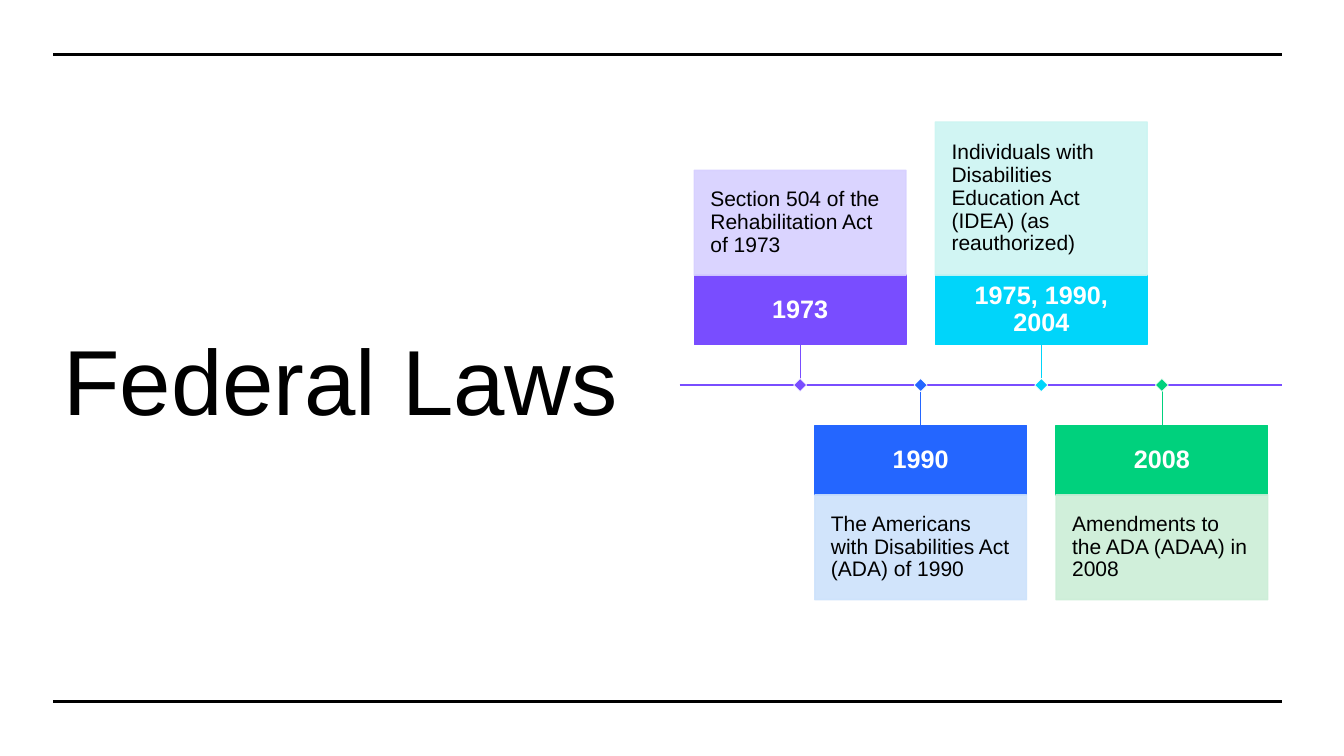
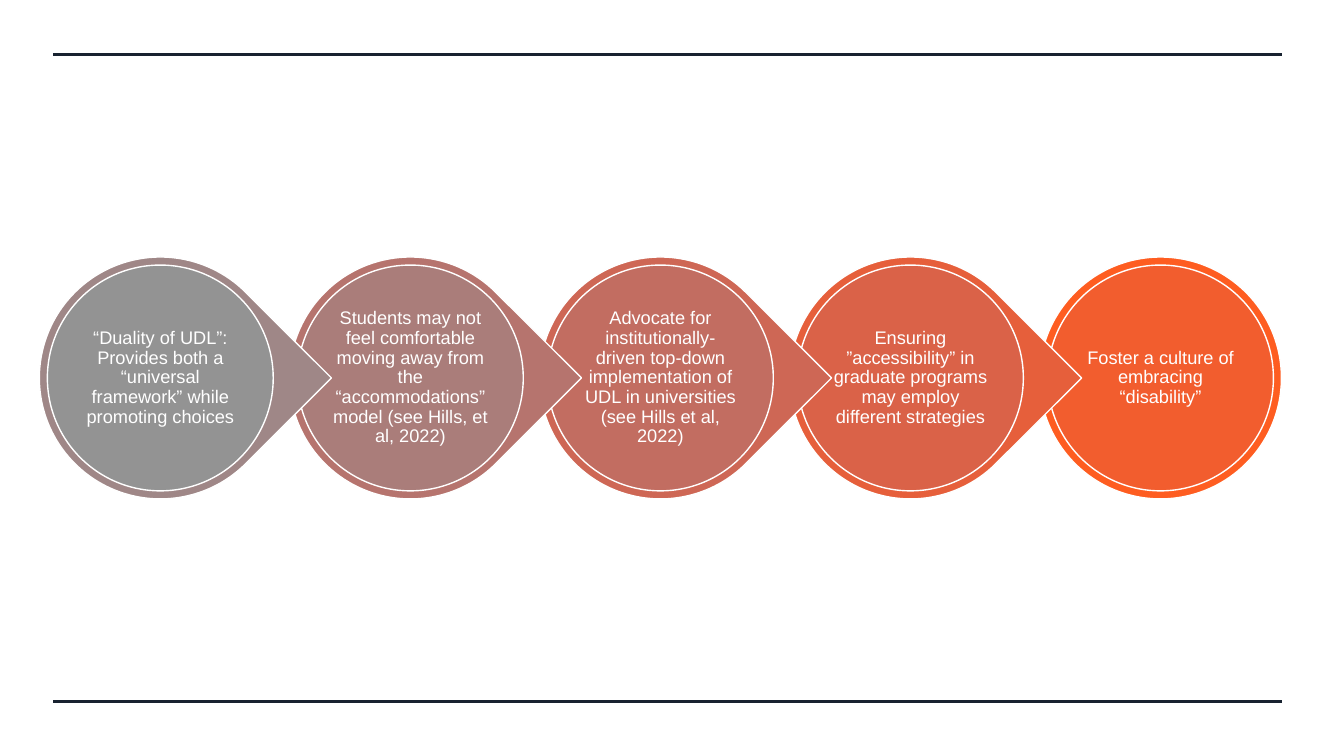
from lxml import etree
from pptx import Presentation
from pptx import util as u
from pptx.dml import color
from pptx.enum import shapes, text
from pptx.oxml import ns

FONT = "Arial"
BLACK, WHITE, NAVY = "000000", "FFFFFF", "182230"
FRAME_LEFT, FRAME_RIGHT = 0.53, 12.72
FRAME_YS = (0.54, 6.96)

AXIS_LEFT, AXIS_Y, AXIS_COLOR = 6.74, 3.82, "794DFF"
CARD_WIDTH, YEAR_HEIGHT, STEM_LENGTH, MARKER_SIZE = 2.1, 0.69, 0.4, 0.13
# year, law, height of the law box, strong colour, pale colour
LAWS = [
    ("1973", "Section 504 of the Rehabilitation Act of 1973", 1.04, "794DFF", "D7D0FF"),
    ("1990", "The Americans with Disabilities Act (ADA) of 1990", 1.04, "2466FF", "CDE2FB"),
    ("1975, 1990, 2004",
     "Individuals with Disabilities Education Act (IDEA) (as reauthorized)",
     1.52, "00D5FA", "CCF5F2"),
    ("2008", "Amendments to the ADA (ADAA) in 2008", 1.04, "00D17D", "CBEED7"),
]

CHAIN_LEFT, CHAIN_STEP, CHAIN_TOP = 0.39, 2.48, 2.55
RING_SIZE, RING_WIDTH = 2.4, 0.08
# statement, ring colour, disc colour
STATEMENTS = [
    ("“Duality of UDL”: Provides both a “universal framework” while promoting choices",
     "9F8787", "939393"),
    ("Students may not feel comfortable moving away from the “accommodations” "
     "model (see Hills, et al, 2022)", "B6746E", "AA7D7A"),
    ("Advocate for institutionally-driven top-down implementation of UDL in "
     "universities (see Hills et al, 2022)", "CE6755", "C26D61"),
    ("Ensuring ”accessibility” in graduate programs may employ different strategies",
     "E65F3B", "DA6248"),
    ("Foster a culture of embracing “disability”", "FE5D21", "F25D2E"),
]


def rgb(value):
    return color.RGBColor.from_string(value)


def add_line(slide, start, end, line_color, width):
    line = slide.shapes.add_connector(
        shapes.MSO_CONNECTOR.STRAIGHT, *(u.Inches(value) for value in (*start, *end)))
    line.line.color.rgb = rgb(line_color)
    line.line.width = u.Pt(width)
    etree.SubElement(line._element.spPr, ns.qn("a:effectLst"))
    return line


def add_shape(slide, kind, box, fill, line_color, line_width=1):
    shape = slide.shapes.add_shape(kind, *(u.Inches(value) for value in box))
    shape.shadow.inherit = False
    shape.fill.solid()
    shape.fill.fore_color.rgb = rgb(fill)
    shape.line.color.rgb = rgb(line_color)
    shape.line.width = u.Pt(line_width)
    return shape


def set_opacity(shape, percent):
    """Apply one opacity to the fill and the outline."""
    for solid in shape._element.spPr.iter(ns.qn("a:srgbClr")):
        etree.SubElement(solid, ns.qn("a:alpha"), val=str(percent * 1000))


def set_text(shape, words, size, font_color, inset, bold=False,
             align=text.PP_ALIGN.CENTER):
    frame = shape.text_frame
    frame.word_wrap = True
    frame.vertical_anchor = text.MSO_ANCHOR.MIDDLE
    frame.margin_left = frame.margin_right = u.Inches(inset)
    frame.margin_top = frame.margin_bottom = u.Inches(inset)
    frame.text = words
    paragraph = frame.paragraphs[0]
    paragraph.alignment = align
    paragraph.line_spacing = 0.9
    font = paragraph.runs[0].font
    font.name, font.size, font.bold = FONT, u.Pt(size), bold
    font.color.rgb = rgb(font_color)


def add_framed_slide(presentation, frame_color):
    """Add a blank slide with the rules along its top and bottom."""
    slide = presentation.slides.add_slide(presentation.slide_layouts[6])
    for y in FRAME_YS:
        add_line(slide, (FRAME_LEFT, y), (FRAME_RIGHT, y), frame_color, 2.25)
    return slide


def add_title(slide, words):
    title = slide.shapes.add_textbox(
        u.Inches(FRAME_LEFT), u.Inches(0.95), u.Inches(6.14), u.Inches(5.75))
    set_text(title, words, 66, BLACK, 0.1, align=text.PP_ALIGN.LEFT)


def add_law(slide, center, above, law):
    """Add a year box, its law box, and the stem and marker on the axis."""
    year, words, height, strong, pale = law
    left = center - CARD_WIDTH / 2
    if above:
        year_top = AXIS_Y - STEM_LENGTH - YEAR_HEIGHT
        law_top, stem_site = year_top - height, 2
    else:
        year_top = AXIS_Y + STEM_LENGTH
        law_top, stem_site = year_top + YEAR_HEIGHT, 0

    rectangle = shapes.MSO_SHAPE.RECTANGLE
    year_box = add_shape(
        slide, rectangle, (left, year_top, CARD_WIDTH, YEAR_HEIGHT), strong, strong)
    set_text(year_box, year, 18, WHITE, 0.1, bold=True)
    law_box = add_shape(slide, rectangle, (left, law_top, CARD_WIDTH, height), pale, pale)
    set_opacity(law_box, 90)
    set_text(law_box, words, 15, BLACK, 0.16, align=text.PP_ALIGN.LEFT)

    stem = add_line(slide, (center, year_top), (center, AXIS_Y), strong, 0.5)
    stem.begin_connect(year_box, stem_site)
    add_shape(slide, shapes.MSO_SHAPE.DIAMOND,
              (center - MARKER_SIZE / 2, AXIS_Y - MARKER_SIZE / 2, MARKER_SIZE, MARKER_SIZE),
              strong, WHITE, 0.5)


def add_statement(slide, left, statement, is_last):
    """Add a ring, pointed unless it is the last, around a disc with text."""
    words, ring_color, disc_color = statement
    kind = shapes.MSO_SHAPE.OVAL if is_last else shapes.MSO_SHAPE.TEAR
    ring = add_shape(slide, kind, (left, CHAIN_TOP, RING_SIZE, RING_SIZE), ring_color, WHITE)
    if not is_last:
        ring.rotation = 45
    disc_size = RING_SIZE - 2 * RING_WIDTH
    disc = add_shape(slide, shapes.MSO_SHAPE.OVAL,
                     (left + RING_WIDTH, CHAIN_TOP + RING_WIDTH, disc_size, disc_size),
                     disc_color, WHITE)
    set_text(disc, words, 13, WHITE, 0.01)


def build_laws_slide(presentation):
    slide = add_framed_slide(presentation, BLACK)
    add_title(slide, "Federal Laws")
    add_line(slide, (AXIS_LEFT, AXIS_Y), (FRAME_RIGHT, AXIS_Y), AXIS_COLOR, 1)
    step = (FRAME_RIGHT - AXIS_LEFT) / (len(LAWS) + 1)
    for index, law in enumerate(LAWS):
        add_law(slide, AXIS_LEFT + step * (index + 1), index % 2 == 0, law)


def build_statements_slide(presentation):
    slide = add_framed_slide(presentation, NAVY)
    last = len(STATEMENTS) - 1
    # Right to left, so that each point lies over the next ring
    for index in range(last, -1, -1):
        add_statement(slide, CHAIN_LEFT + CHAIN_STEP * index, STATEMENTS[index], index == last)


def main():
    presentation = Presentation()
    presentation.slide_width = u.Inches(13.33)
    presentation.slide_height = u.Inches(7.5)
    build_laws_slide(presentation)
    build_statements_slide(presentation)
    presentation.save("out.pptx")


if __name__ == "__main__":
    main()
